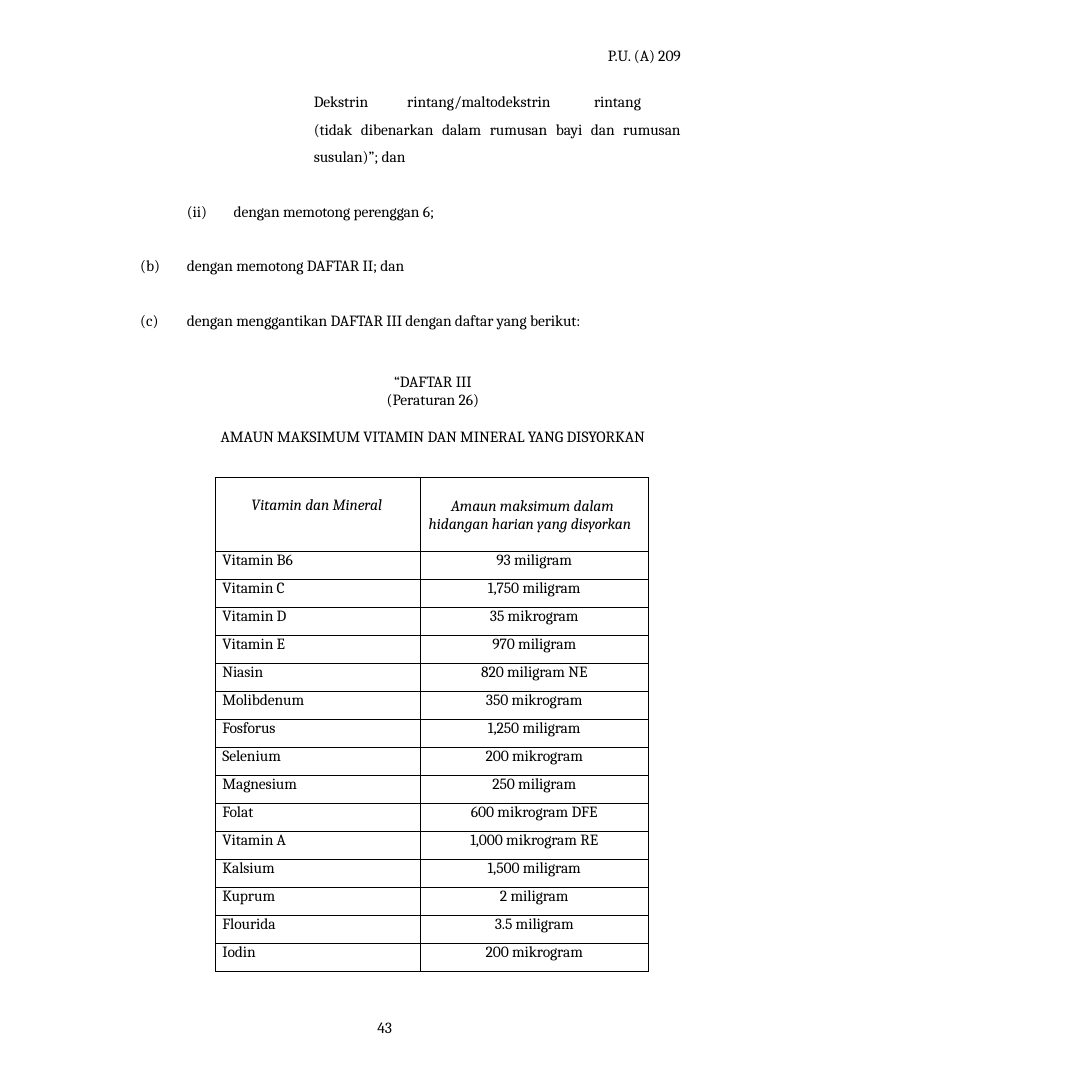
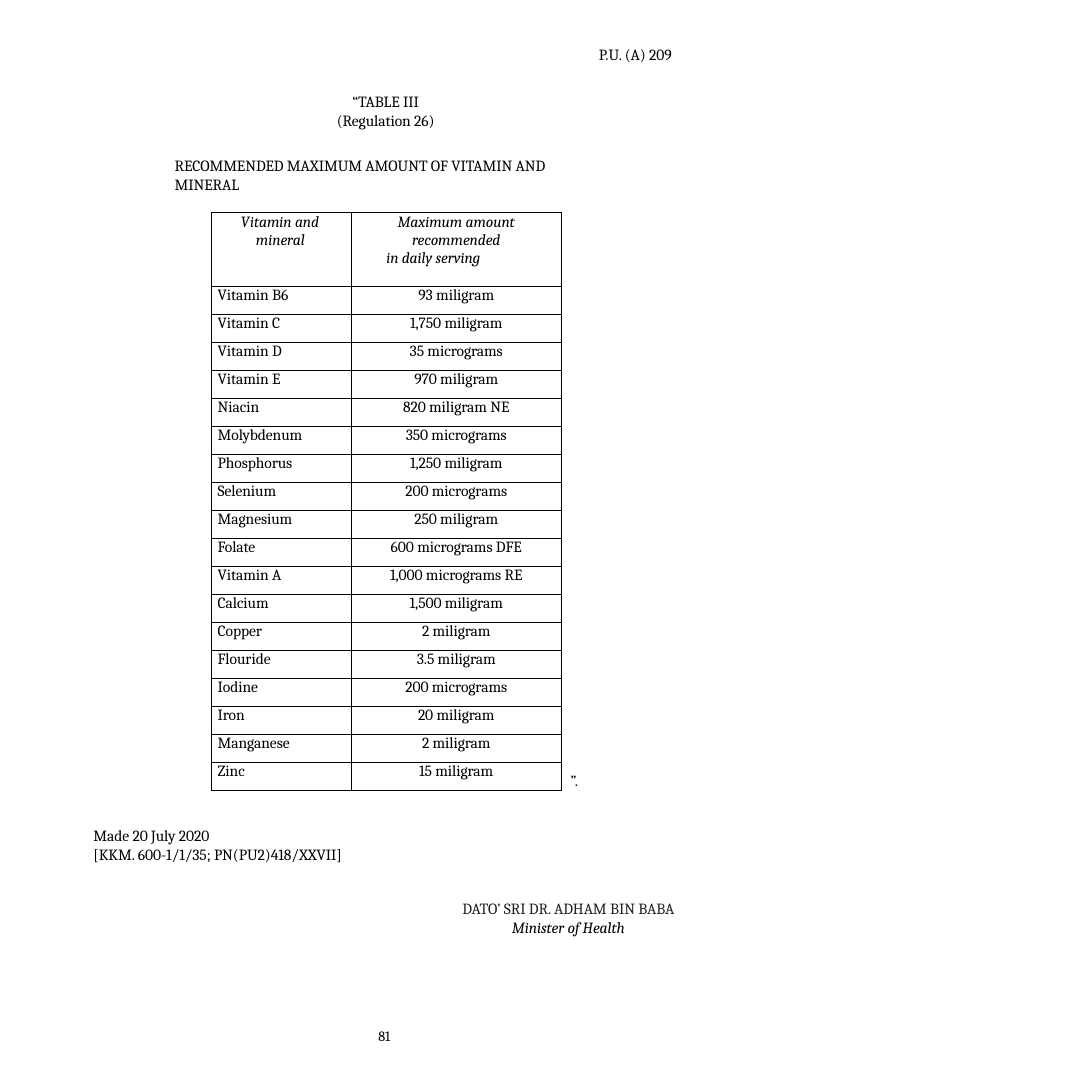
from lxml import etree
from pptx import Presentation
from pptx.dml.color import RGBColor
from pptx.enum.text import MSO_AUTO_SIZE, PP_ALIGN
from pptx.oxml.ns import qn
from pptx.util import Inches, Pt

FONT = "Cambria"
BLACK = RGBColor(0, 0, 0)
GREY = RGBColor(0x20, 0x20, 0x20)
LEFT, MID, RIGHT, BOTH = PP_ALIGN.LEFT, PP_ALIGN.CENTER, PP_ALIGN.RIGHT, PP_ALIGN.JUSTIFY
FIT = MSO_AUTO_SIZE.SHAPE_TO_FIT_TEXT
SIDE = 11.69
HEAD, ROW = 0.79, 0.3
LEAD = Pt(14.2)
CELL = Pt(14)
REF = "P.U. (A) 209"


def add(parent, tag, **attrs):
    return etree.SubElement(parent, qn(tag), attrs)


class Page:
    """Holds the deck, the current slide and the shared text style."""

    def __init__(self):
        self.deck = Presentation()
        self.deck.slide_width = self.deck.slide_height = Inches(SIDE)
        self.slide = None

    def new(self):
        self.slide = self.deck.slides.add_slide(self.deck.slide_layouts[6])

    def para(self, p, text, align=LEFT, left=0.01, right=0, first=0, before=0,
             lead=None, start=None, tabs=(), size=12, color=BLACK, italic=False):
        """Fill a paragraph; left, right, first and tabs are in inches."""
        p.text = text
        p.alignment = align
        p.space_before = Pt(before)
        if lead:
            p.line_spacing = lead
        props = p._p.get_or_add_pPr()
        for name, gap in (("marL", left), ("marR", right), ("indent", first)):
            props.set(name, str(Inches(gap)))
        if start:
            add(props, "a:buAutoNum", type="alphaLcParenBoth", startAt=str(start))
        if tabs:
            stops = add(props, "a:tabLst")
            for tab in tabs:
                add(stops, "a:tab", pos=str(Inches(tab)), algn="l")
        font = p.font
        font.name, font.size, font.italic = FONT, Pt(size), italic
        font.color.rgb = color
        props.find(qn("a:defRPr")).set("spc", "-5")

    def fill(self, frame, lines):
        """Write (text, style) pairs into a text frame."""
        for i, (text, style) in enumerate(lines):
            p = frame.add_paragraph() if i else frame.paragraphs[0]
            self.para(p, text, **style)

    def text(self, x, y, w, h, *lines):
        box = self.slide.shapes.add_textbox(*map(Inches, (x, y, w, h)))
        frame = box.text_frame
        frame.word_wrap = True
        frame.auto_size = FIT
        frame.margin_left = frame.margin_right = frame.margin_bottom = 0
        frame.margin_top = Inches(0.01)
        self.fill(frame, lines)

    def cell(self, cell, lines, top=0):
        cell.margin_left = cell.margin_right = cell.margin_bottom = 0
        cell.margin_top = Inches(top)
        props = cell._tc.get_or_add_tcPr()
        for edge in "LRTB":
            line = add(props, "a:ln" + edge, w=str(Pt(0.5)))
            add(add(line, "a:solidFill"), "a:srgbClr", val=str(BLACK))
        cell.fill.background()
        self.fill(cell.text_frame, lines)

    def table(self, x, y, widths, heads, tops, rows):
        """Draw a two-column table of nutrients under italic heads."""
        high = HEAD + ROW * len(rows)
        grid = self.slide.shapes.add_table(
            len(rows) + 1, 2, Inches(x), Inches(y),
            Inches(sum(widths)), Inches(high)).table
        grid.first_row = grid.horz_banding = False
        for col, width in zip(grid.columns, widths):
            col.width = Inches(width)
        for i, row in enumerate(grid.rows):
            row.height = Inches(ROW if i else HEAD)
        for i, (lines, top) in enumerate(zip(heads, tops)):
            styled = [(text, dict(style, italic=True, lead=CELL)) for text, style in lines]
            self.cell(grid.cell(0, i), styled, top)
        for i, (name, amount) in enumerate(rows, 1):
            self.cell(grid.cell(i, 0), [(name, dict(left=0.07, lead=CELL))])
            self.cell(grid.cell(i, 1), [(amount, dict(left=0, align=MID, lead=CELL))])


def malay(page):
    page.new()
    page.text(4, 10.89, 0.28, 0.22, ("43", dict(left=0.04)))
    page.text(3.35, 0.48, 3.94, 1.31,
              (REF, dict(align=RIGHT, before=1)),
              ("Dekstrin\trintang/maltodekstrin\trintang (tidak dibenarkan dalam "
               "rumusan bayi dan rumusan susulan)”; dan",
               dict(align=BOTH, before=14.8, lead=1.47, tabs=(1.21, 3.4))))
    page.text(1.99, 2.15, 0.25, 0.23, ("(ii)", dict(before=1)))
    page.text(2.49, 2.15, 2.32, 0.23,
              ("dengan memotong perenggan 6;", dict(before=1)))
    item = dict(left=0.51, first=-0.5, start=2, tabs=(0.51,))
    title = dict(align=MID, left=0.82)
    page.text(1.49, 2.73, 5.47, 2.06,
              ("dengan memotong DAFTAR II; dan", dict(item, before=1)),
              ("dengan menggantikan DAFTAR III dengan daftar yang berikut:",
               dict(item, before=27.9)),
              ("“DAFTAR III", dict(title, before=33, lead=LEAD)),
              ("(Peraturan 26)", dict(title, lead=LEAD)),
              ("AMAUN MAKSIMUM VITAMIN DAN MINERAL YANG DISYORKAN",
               dict(title, before=13.7)))
    heads = ([("Vitamin dan Mineral", dict(left=0.38))],
             [("Amaun maksimum dalam hidangan harian yang disyorkan",
               dict(left=0.09, first=0.24))])
    page.table(2.31, 5.11, (2.19, 2.44), heads, (0.2, 0.21), [
        ("Vitamin B6", "93 miligram"),
        ("Vitamin C", "1,750 miligram"),
        ("Vitamin D", "35 mikrogram"),
        ("Vitamin E", "970 miligram"),
        ("Niasin", "820 miligram NE"),
        ("Molibdenum", "350 mikrogram"),
        ("Fosforus", "1,250 miligram"),
        ("Selenium", "200 mikrogram"),
        ("Magnesium", "250 miligram"),
        ("Folat", "600 mikrogram DFE"),
        ("Vitamin A", "1,000 mikrogram RE"),
        ("Kalsium", "1,500 miligram"),
        ("Kuprum", "2 miligram"),
        ("Flourida", "3.5 miligram"),
        ("Iodin", "200 mikrogram"),
    ])


def english(page):
    page.new()
    page.text(4, 10.99, 0.27, 0.22, ("81", dict(left=0.05, before=1.6, size=11)))
    page.text(6.4, 0.47, 0.88, 0.23, (REF, dict(before=1)))
    title = dict(align=MID, left=0, right=0.23, lead=LEAD)
    page.text(1.86, 0.98, 4.77, 0.91,
              ("“TABLE III", dict(title, before=1)),
              ("(Regulation 26)", title),
              ("RECOMMENDED MAXIMUM AMOUNT OF VITAMIN AND MINERAL",
               dict(right=0.23, before=20.6)))
    heads = ([("Vitamin and mineral", dict(left=0.48, first=-0.16))],
             [("Maximum amount recommended", dict(align=MID, left=0.49, right=0.49)),
              ("in daily serving", dict(align=MID, left=0, right=0.49))])
    page.table(2.26, 2.27, (1.5, 2.25), heads, (0.01, 0.01), [
        ("Vitamin B6", "93 miligram"),
        ("Vitamin C", "1,750 miligram"),
        ("Vitamin D", "35 micrograms"),
        ("Vitamin E", "970 miligram"),
        ("Niacin", "820 miligram NE"),
        ("Molybdenum", "350 micrograms"),
        ("Phosphorus", "1,250 miligram"),
        ("Selenium", "200 micrograms"),
        ("Magnesium", "250 miligram"),
        ("Folate", "600 micrograms DFE"),
        ("Vitamin A", "1,000 micrograms RE"),
        ("Calcium", "1,500 miligram"),
        ("Copper", "2 miligram"),
        ("Flouride", "3.5 miligram"),
        ("Iodine", "200 micrograms"),
        ("Iron", "20 miligram"),
        ("Manganese", "2 miligram"),
        ("Zinc", "15 miligram"),
    ])
    page.text(0.99, 8.84, 2.89, 0.42,
              ("Made 20 July 2020", dict(before=1, lead=LEAD)),
              ("[KKM. 600-1/1/35; PN(PU2)418/XXVII]", dict(lead=LEAD)))
    sign = dict(align=MID, left=0, lead=LEAD)
    page.text(4.89, 9.62, 2.39, 0.42,
              ("DATO’ SRI DR. ADHAM BIN BABA", dict(sign, before=1, color=GREY)),
              ("Minister of Health", dict(sign, italic=True)))
    page.text(6.1, 8.24, 0.13, 0.23, ("”.", dict(before=1)))


def main():
    page = Page()
    malay(page)
    english(page)
    page.deck.save("out.pptx")


if __name__ == "__main__":
    main()
